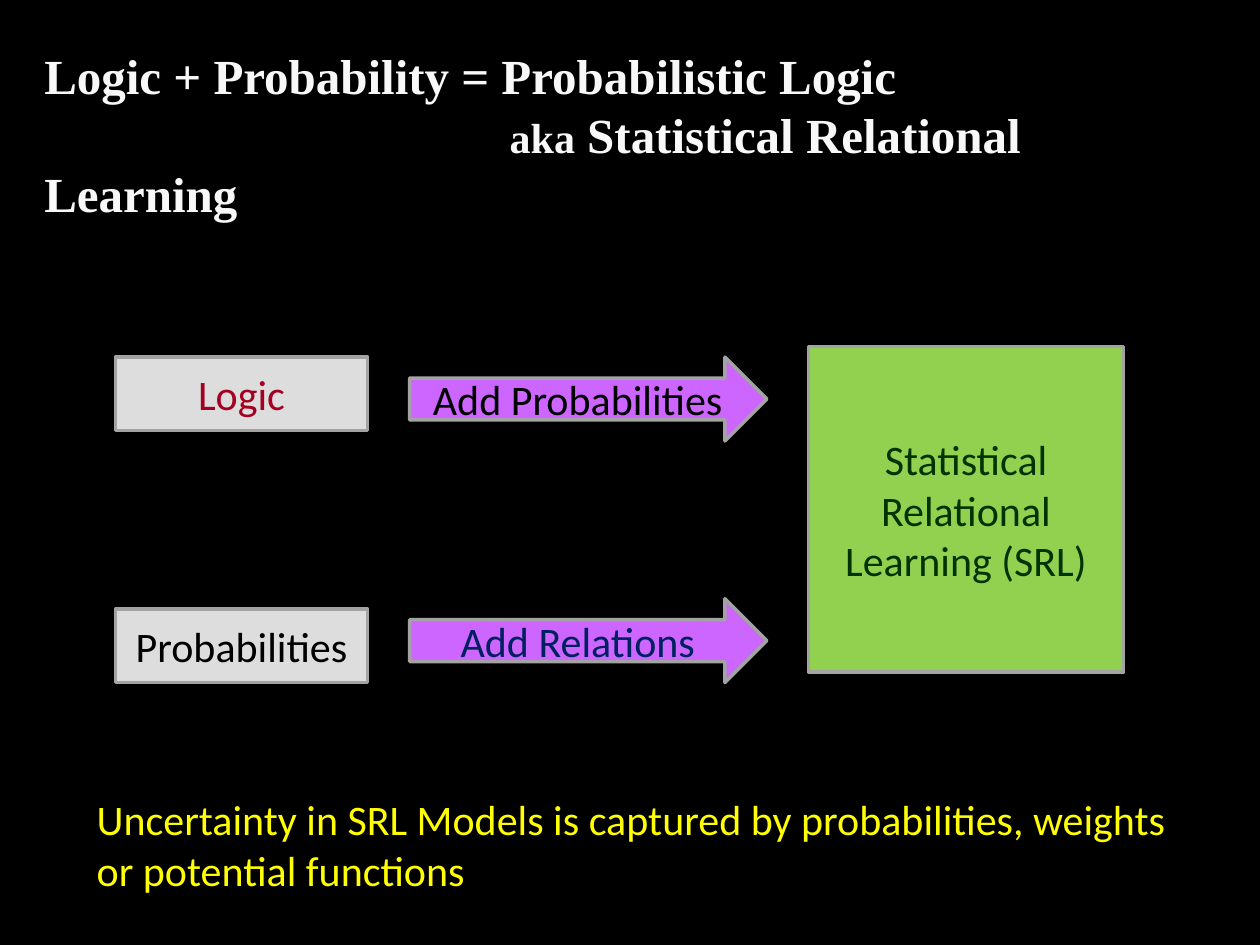
from pptx import Presentation
from pptx.dml.color import RGBColor
from pptx.enum.shapes import MSO_SHAPE
from pptx.enum.text import MSO_ANCHOR, PP_ALIGN
from pptx.util import Cm, Pt


def paint(color, code):
    color.rgb = RGBColor.from_string(code)


def write(para, text, size, face, code, bold=False):
    run = para.add_run()
    run.text = text
    run.font.size = Pt(size)
    run.font.name = face
    run.font.bold = bold
    paint(run.font.color, code)


deck = Presentation()
deck.slide_width = Cm(25.4)
deck.slide_height = Cm(19.05)
slide = deck.slides.add_slide(deck.slide_layouts[5])
back = slide.background.fill
back.solid()
paint(back.fore_color, "000000")

title = slide.shapes.title
title.left, title.top = Cm(0.64), Cm(0.76)
title.width, title.height = Cm(24.13), Cm(3.89)
frame = title.text_frame
frame.word_wrap = True
frame.vertical_anchor = MSO_ANCHOR.MIDDLE
first, second = frame.paragraphs[0], frame.add_paragraph()
for para in (first, second):
    para.alignment = PP_ALIGN.LEFT
    para.space_before = Pt(0)
second._p.get_or_add_pPr().set("indent", str(Cm(9.38)))
serif = "Times New Roman"
write(first, "Logic + Probability = Probabilistic Logic", 28, serif, "F8F8F8", True)
write(second, "aka", 24, serif, "F8F8F8", True)
write(second, " Statistical Relational Learning", 28, serif, "F8F8F8", True)

rect, arrow = MSO_SHAPE.RECTANGLE, MSO_SHAPE.RIGHT_ARROW
parts = [
    (rect, 2.33, 7.2, 5.08, 1.48, "DDDDDD", "Logic", "A50021"),
    (rect, 2.33, 12.28, 5.08, 1.48, "DDDDDD", "Probabilities", "000000"),
    (arrow, 8.26, 7.2, 7.2, 1.69, "CC66FF", "Add Probabilities", "000000"),
    (arrow, 8.26, 12.07, 7.2, 1.69, "CC66FF", "Add Relations", "002060"),
    (rect, 16.3, 6.99, 6.35, 6.56, "92D050",
     "Statistical Relational Learning (SRL)", "003300"),
]
for kind, left, top, width, height, fill, text, ink in parts:
    shape = slide.shapes.add_shape(kind, Cm(left), Cm(top), Cm(width), Cm(height))
    shape.shadow.inherit = False
    shape.fill.solid()
    paint(shape.fill.fore_color, fill)
    paint(shape.line.color, "A3A3A3")
    shape.line.width = Pt(2)
    frame = shape.text_frame
    frame.word_wrap = True
    frame.vertical_anchor = MSO_ANCHOR.MIDDLE
    para = frame.paragraphs[0]
    para.alignment = PP_ALIGN.CENTER
    write(para, text, 24, "Calibri", ink)

note = slide.shapes.add_textbox(Cm(1.7), Cm(15.88), Cm(22.23), Cm(2.31))
note.text_frame.word_wrap = True
write(note.text_frame.paragraphs[0],
      "Uncertainty in SRL Models is captured by probabilities, weights or potential functions",
      24, "Calibri", "FFFF00")

deck.save("out.pptx")
